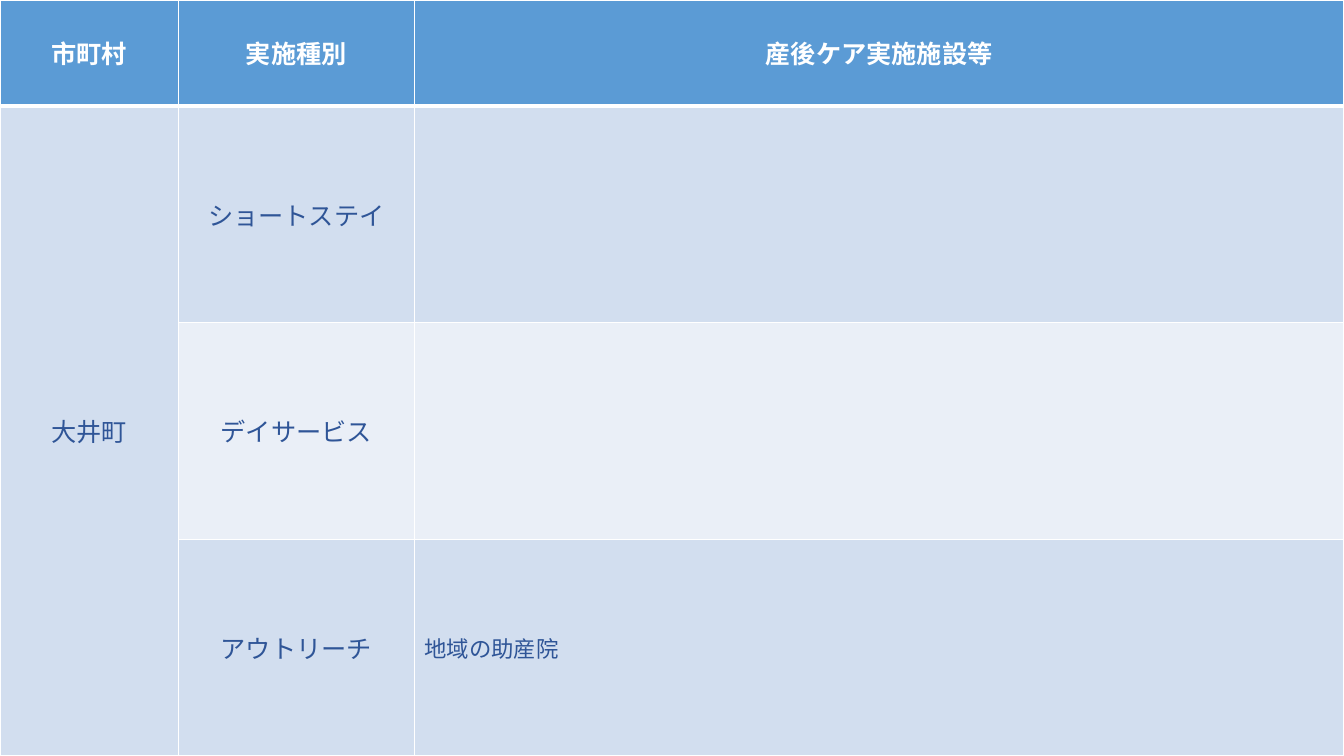
"""Build a slide with a table of postnatal care facilities in one town."""
from lxml import etree
from pptx import Presentation
from pptx.dml.color import RGBColor
from pptx.enum.text import MSO_ANCHOR, PP_ALIGN
from pptx.oxml.ns import qn
from pptx.util import Inches, Pt

MIDDLE = MSO_ANCHOR.MIDDLE
CENTER, LEFT = PP_ALIGN.CENTER, PP_ALIGN.LEFT
WHITE = RGBColor(0xFF, 0xFF, 0xFF)
HEADER_BLUE = RGBColor(0x5B, 0x9B, 0xD5)
BAND_DARK = RGBColor(0xD2, 0xDE, 0xEF)
BAND_LIGHT = RGBColor(0xEA, 0xEF, 0xF7)
TEXT_BLUE = RGBColor(0x2F, 0x55, 0x97)
FONT = "Noto Sans CJK JP"

COLUMN_WIDTHS = [1.77, 2.34, 9.22]
ROW_HEIGHTS = [1.05, 2.15, 2.15, 2.15]
ROWS = [
    ["市町村", "実施種別", "産後ケア実施施設等"],
    ["大井町", "ショートステイ", ""],
    ["", "デイサービス", ""],
    ["", "アウトリーチ", "地域の助産院"],
]


def add_border(cell, side, points):
    """Draw a white line along one side of a cell."""
    properties = cell._tc.get_or_add_tcPr()
    line = etree.SubElement(properties, qn(f"a:ln{side}"), w=str(Pt(points)))
    fill = etree.SubElement(line, qn("a:solidFill"))
    etree.SubElement(fill, qn("a:srgbClr"), val=str(WHITE))


deck = Presentation()
deck.slide_width = Inches(13.33)
deck.slide_height = Inches(7.5)
page = deck.slides.add_slide(deck.slide_layouts[6])

table = page.shapes.add_table(
    len(ROWS), len(COLUMN_WIDTHS), Inches(0), Inches(0), Inches(13.33), Inches(7.5)
).table
for column, width in zip(table.columns, COLUMN_WIDTHS):
    column.width = Inches(width)
for row, height in zip(table.rows, ROW_HEIGHTS):
    row.height = Inches(height)

for row_index, texts in enumerate(ROWS):
    is_header = row_index == 0
    band = BAND_DARK if row_index % 2 else BAND_LIGHT
    for column_index, text in enumerate(texts):
        cell = table.cell(row_index, column_index)
        add_border(cell, "L", 1)
        add_border(cell, "R", 1)
        add_border(cell, "T", 3 if row_index == 1 else 1)
        add_border(cell, "B", 3 if is_header else 1)
        cell.fill.solid()
        cell.fill.fore_color.rgb = HEADER_BLUE if is_header else band
        cell.vertical_anchor = MIDDLE
        if not text:
            continue
        is_facility = column_index == 2 and not is_header
        para = cell.text_frame.paragraphs[0]
        para.alignment = LEFT if is_facility else CENTER
        span = para.add_run()
        span.text = text
        span.font.size = Pt(16 if is_facility else 18)
        span.font.bold = is_header
        span.font.color.rgb = WHITE if is_header else TEXT_BLUE
        span.font.name = FONT
        etree.SubElement(span.font._element, qn("a:ea"), typeface=FONT)

table.cell(1, 0).merge(table.cell(3, 0))

deck.save("out.pptx")
